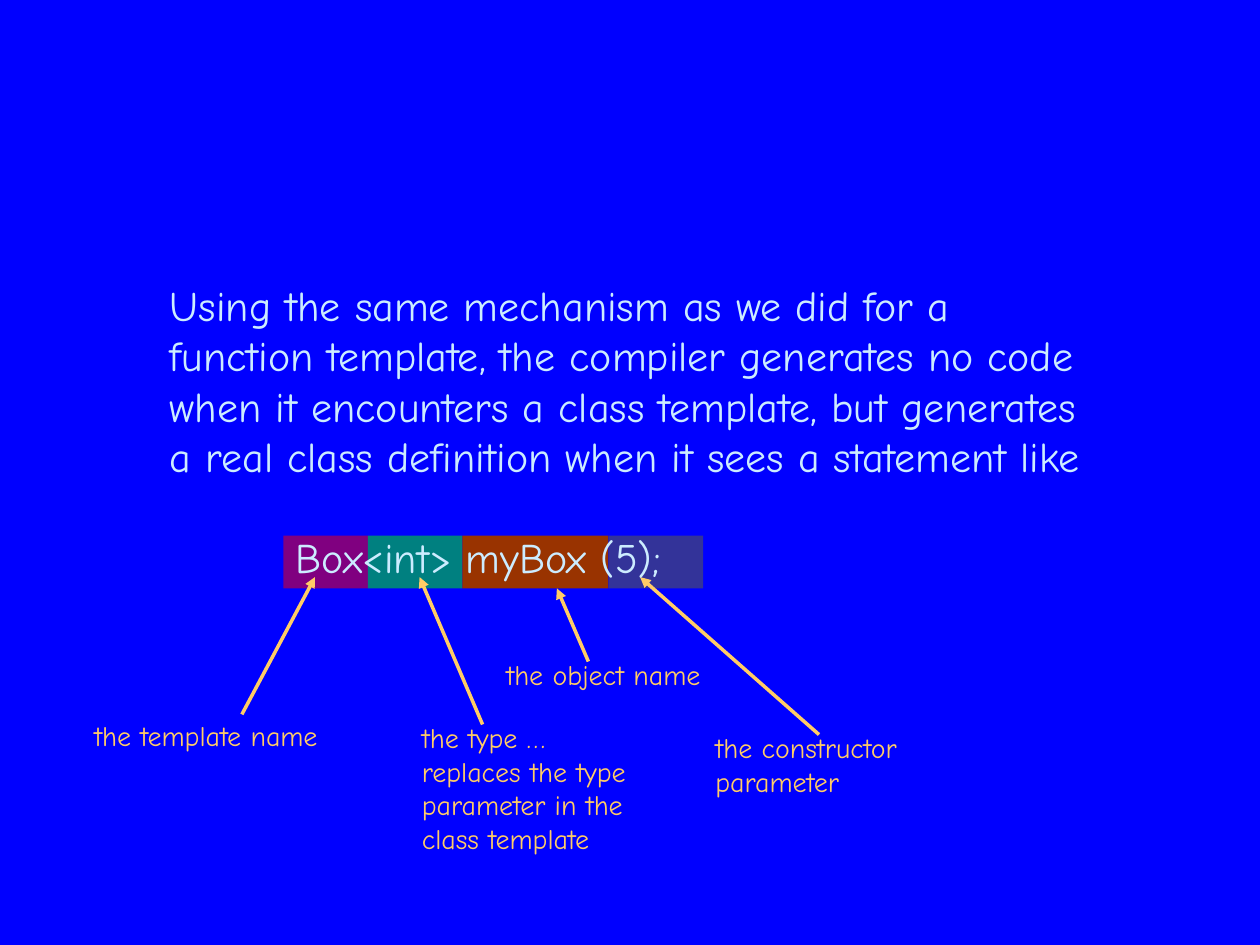
from lxml.etree import SubElement
from pptx import Presentation
from pptx.dml.color import RGBColor
from pptx.enum.shapes import MSO_CONNECTOR as Connector, MSO_SHAPE as Shape
from pptx.enum.text import MSO_AUTO_SIZE as AutoSize
from pptx.oxml.ns import qn
from pptx.util import Inches, Pt

FONT = "Comic Neue"
BACKGROUND, BODY_COLOR, NOTE_COLOR = "0000FF", "CCECFF", "FFCC66"
BAND_TOP, BAND_HEIGHT = 4.25, 0.42

BODY = [
    "Using the same mechanism as we did for a",
    "function template, the compiler generates no code",
    "when it encounters a class template, but generates",
    "a real class definition when it sees a statement like",
    "\tBox<int> myBox (5);",
]

# Code part: left, right, fill; note: lines, place; arrow: start, end
PARTS = [
    (2.25, 2.92, "800080", ["the template name"],
     (0.65, 5.65, 2.13, 0.37), (1.92, 5.67), (2.5, 4.58)),
    (2.92, 3.67, "008080",
     ["the type …", "replaces the type", "parameter in the", "class template"],
     (3.25, 5.67, 2.01, 1.17), (3.83, 5.75), (3.33, 4.58)),
    (3.67, 4.83, "993300", ["the object name"],
     (3.92, 5.17, 1.89, 0.37), (4.67, 5.25), (4.42, 4.67)),
    (4.83, 5.58, "333399", ["the constructor", "parameter"],
     (5.58, 5.75, 1.91, 0.64), (6.5, 5.83), (5.08, 4.58)),
]


def paint(target, color):
    """Give a fill a solid colour from a hex string."""
    target.solid()
    target.fore_color.rgb = RGBColor.from_string(color)


def add_tab_stop(para, position):
    """Add a left tab stop to a paragraph."""
    stops = SubElement(para._p.get_or_add_pPr(), qn("a:tabLst"))
    SubElement(stops, qn("a:tab"), pos=str(Inches(position)), algn="l")


def add_text(page, lines, place, *, size, color, last_gap=0):
    """Add a text box with one paragraph per line and a gap above the last."""
    box = page.shapes.add_textbox(*map(Inches, place))
    frame = box.text_frame
    frame.word_wrap = False
    frame.auto_size = AutoSize.SHAPE_TO_FIT_TEXT
    for index, line in enumerate(lines):
        para = frame.add_paragraph() if index else frame.paragraphs[0]
        if line.startswith("\t"):
            add_tab_stop(para, 1)
        span = para.add_run()
        span.text = line
        span.font.name = FONT
        span.font.size = Pt(size)
        paint(span.font.fill, color)
    if last_gap:
        para.space_before = Pt(last_gap)


def add_band(page, left, right, color):
    """Add the coloured band behind one part of the statement."""
    place = (left, BAND_TOP, right - left, BAND_HEIGHT)
    band = page.shapes.add_shape(Shape.RECTANGLE, *map(Inches, place))
    band.shadow.inherit = False
    paint(band.fill, color)
    band.line.fill.background()


def add_arrow(page, start, end):
    """Add an arrow that points from a note to its part of the statement."""
    arrow = page.shapes.add_connector(
        Connector.STRAIGHT, *map(Inches, start + end))
    arrow.line.width = Pt(2)
    paint(arrow.line.fill, NOTE_COLOR)
    SubElement(arrow.line._get_or_add_ln(), qn("a:tailEnd"), type="triangle")
    SubElement(arrow._element.spPr, qn("a:effectLst"))


def main():
    """Build the slide and save it."""
    deck = Presentation()
    deck.slide_width, deck.slide_height = Inches(10), Inches(7.5)
    page = deck.slides.add_slide(deck.slide_layouts[6])
    paint(page.background.fill, BACKGROUND)
    for left, right, color, lines, place, start, end in PARTS:
        add_band(page, left, right, color)
        add_text(page, lines, place, size=16, color=NOTE_COLOR)
        add_arrow(page, start, end)
    add_text(page, BODY, (1.25, 2.17, 8.17, 2.5),
             size=24, color=BODY_COLOR, last_gap=28.8)
    deck.save("out.pptx")


if __name__ == "__main__":
    main()
